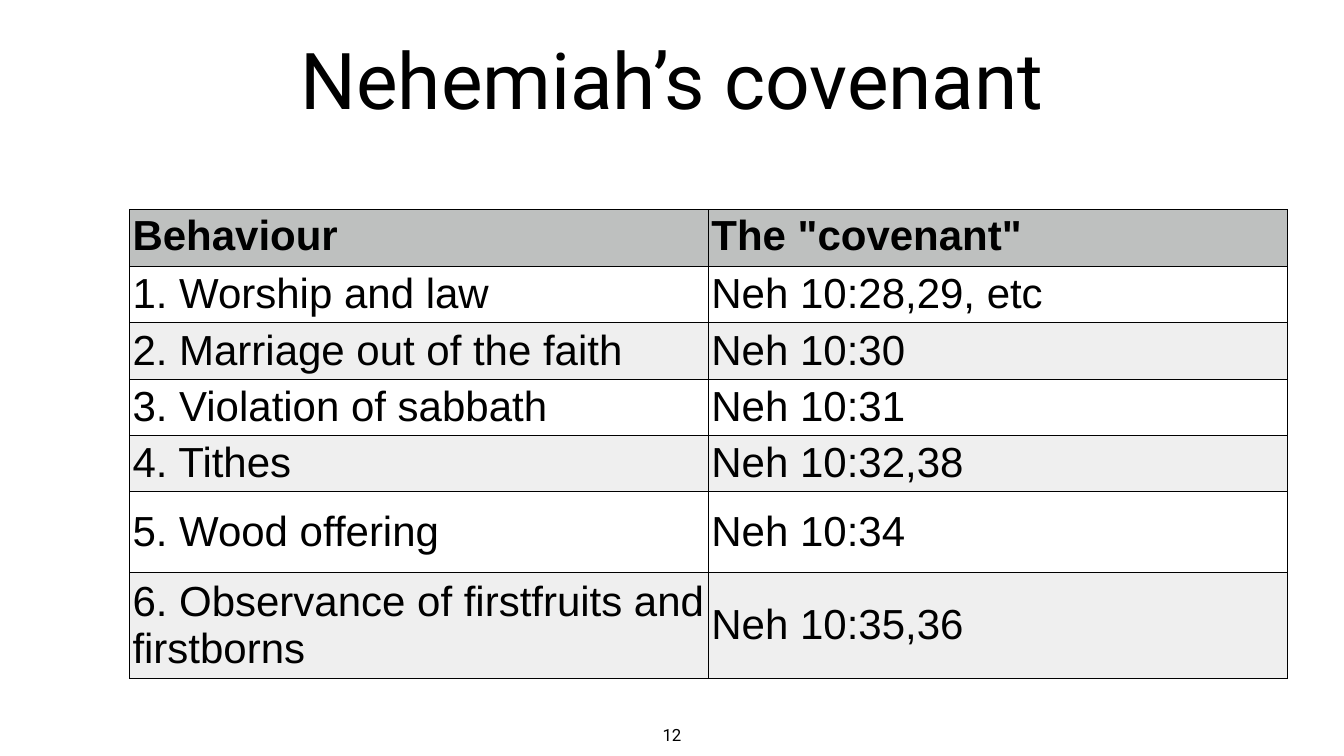
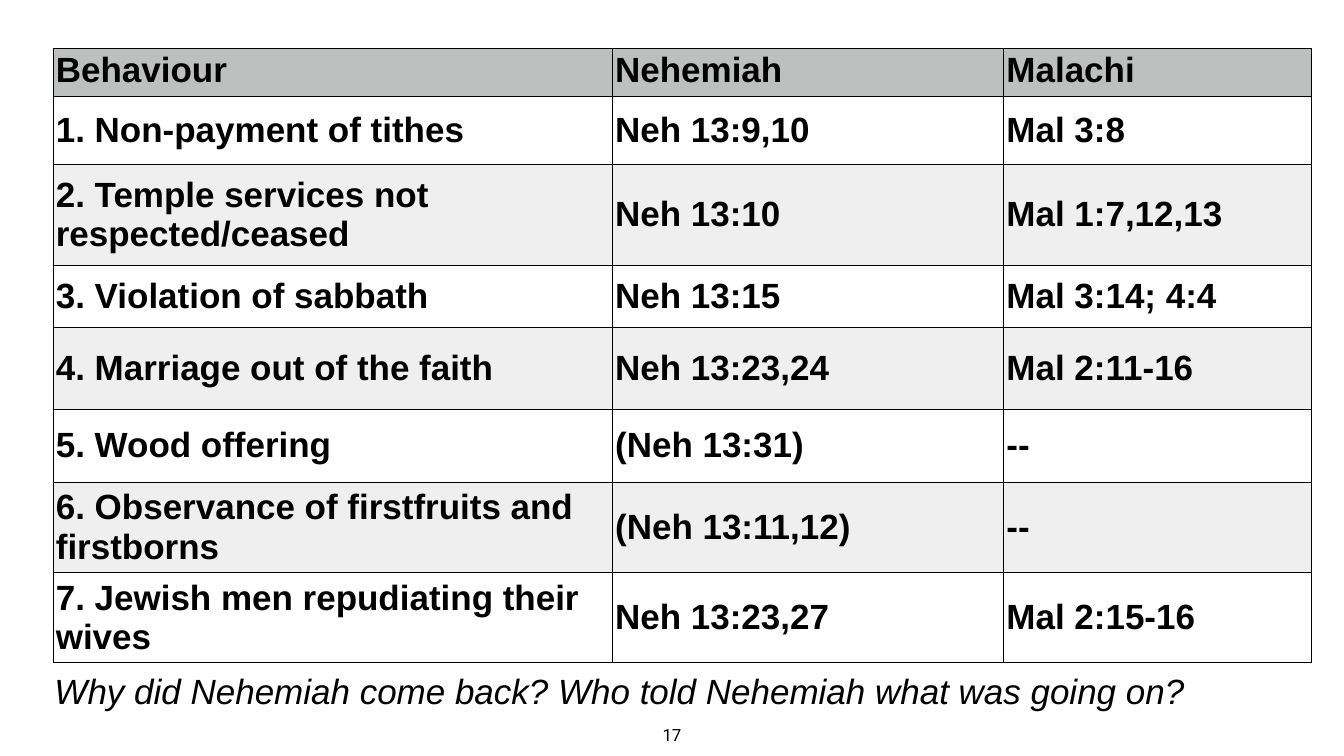
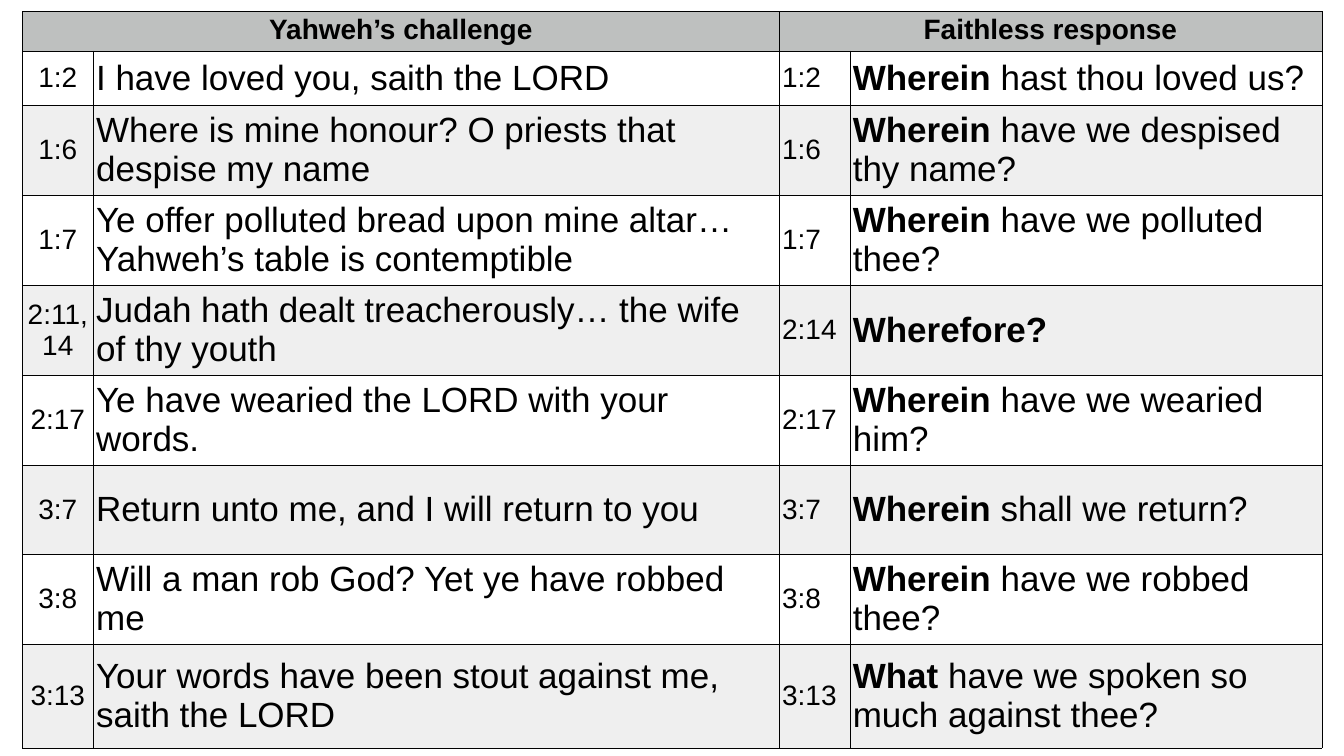
from pptx import Presentation
from pptx.dml.color import RGBColor as RGB
from pptx.enum.text import MSO_ANCHOR as ANCHOR, MSO_AUTO_SIZE as AUTO, PP_ALIGN as ALIGN
from pptx.oxml import parse_xml
from pptx.oxml.ns import nsdecls
from pptx.util import Pt

COLORS = {"text": "000000", "border": "000000", "header": "BEC0BF", "band": "EFEFEF"}
TABLE_FONT, PAGE_FONT = "Arial", "Roboto"
INSET = 4.32
THIN, THICK = 0.25, 0.5
TITLE_LAYOUT, BLANK_LAYOUT = 5, 6

COVENANT = [
    ("Behaviour", 'The "covenant"'),
    ("1. Worship and law", "Neh 10:28,29, etc"),
    ("2. Marriage out of the faith", "Neh 10:30"),
    ("3. Violation of sabbath", "Neh 10:31"),
    ("4. Tithes", "Neh 10:32,38"),
    ("5. Wood offering", "Neh 10:34"),
    ("6. Observance of firstfruits and firstborns", "Neh 10:35,36"),
]
BEHAVIOUR = [
    ("Behaviour", "Nehemiah", "Malachi"),
    ("1. Non-payment of tithes", "Neh 13:9,10", "Mal 3:8"),
    ("2. Temple services not respected/ceased", "Neh 13:10", "Mal 1:7,12,13"),
    ("3. Violation of sabbath", "Neh 13:15", "Mal 3:14; 4:4"),
    ("4. Marriage out of the faith", "Neh 13:23,24", "Mal 2:11-16"),
    ("5. Wood offering", "(Neh 13:31)", "--"),
    ("6. Observance of firstfruits and firstborns", "(Neh 13:11,12)", "--"),
    ("7. Jewish men repudiating their wives", "Neh 13:23,27", "Mal 2:15-16"),
]
QUESTION = "Why did Nehemiah come back? Who told Nehemiah what was going on?"
CHALLENGES = [
    ("Yahweh’s challenge", None, "Faithless response", None),
    ("1:2", "I have loved you, saith the LORD", "1:2", ("Wherein", " hast thou loved us?")),
    ("1:6", "Where is mine honour? O priests that despise my name",
     "1:6", ("Wherein", " have we despised thy name?")),
    ("1:7", "Ye offer polluted bread upon mine altar… Yahweh’s table is contemptible",
     "1:7", ("Wherein", " have we polluted thee?")),
    ("2:11,14", "Judah hath dealt treacherously… the wife of thy youth",
     "2:14", ("Wherefore?",)),
    ("2:17", "Ye have wearied the LORD with your words.",
     "2:17", ("Wherein", " have we wearied him?")),
    ("3:7", "Return unto me, and I will return to you", "3:7", ("Wherein", " shall we return?")),
    ("3:8", "Will a man rob God? Yet ye have robbed me",
     "3:8", ("Wherein", " have we robbed thee?")),
    ("3:13", "Your words have been stout against me, saith the LORD",
     "3:13", ("What", " have we spoken so much against thee?")),
]


def add_run(p, text, size, font=TABLE_FONT, bold=False, italic=False):
    r = p.add_run()
    r.text = text
    r.font.size, r.font.name = Pt(size), font
    r.font.bold, r.font.italic = bold, italic
    r.font.color.rgb = RGB.from_string(COLORS["text"])


def set_insets(box):
    box.margin_left = box.margin_right = box.margin_top = box.margin_bottom = Pt(INSET)


def add_line(s, box, text, size, align=ALIGN.LEFT, anchor=ANCHOR.TOP, **style):
    tf = s.shapes.add_textbox(*map(Pt, box)).text_frame
    set_insets(tf)
    tf.word_wrap, tf.auto_size, tf.vertical_anchor = False, AUTO.SHAPE_TO_FIT_TEXT, anchor
    p = tf.paragraphs[0]
    p.alignment = align
    add_run(p, text, size, **style)


def add_slide(prs, number, layout=BLANK_LAYOUT):
    s = prs.slides.add_slide(prs.slide_layouts[layout])
    add_line(s, (942, 1030.5, 36, 37), str(number), 24, ALIGN.CENTER, font=PAGE_FONT)
    return s


def set_borders(cell, row):
    top = THICK if row == 1 else THIN
    bottom = THICK if row == 0 else THIN
    for side, width in (("L", THIN), ("R", THIN), ("T", top), ("B", bottom)):
        cell._tc.get_or_add_tcPr().append(parse_xml(
            f'<a:ln{side} {nsdecls("a")} w="{Pt(width)}"><a:solidFill>'
            f'<a:srgbClr val="{COLORS["border"]}"/></a:solidFill></a:ln{side}>'))


def fill_cell(cell, row):
    if row == 0 or row % 2 == 0:
        cell.fill.solid()
        cell.fill.fore_color.rgb = RGB.from_string(COLORS["band" if row else "header"])
    else:
        cell.fill.background()


def add_grid(s, left, top, widths, heights, rows, sizes, header_size,
             bold=False, centered=(), header_align=ALIGN.LEFT):
    table = s.shapes.add_table(len(rows), len(widths), Pt(left), Pt(top),
                               Pt(sum(widths)), Pt(sum(heights))).table
    table.first_row = table.horz_banding = False
    for col, width in zip(table.columns, widths):
        col.width = Pt(width)
    for line, height in zip(table.rows, heights):
        line.height = Pt(height)
    for i, values in enumerate(rows):
        for j, value in enumerate(values):
            cell = table.cell(i, j)
            set_insets(cell)
            set_borders(cell, i)
            fill_cell(cell, i)
            if value is None:
                table.cell(i, j - 1).merge(cell)
                continue
            cell.vertical_anchor = ANCHOR.MIDDLE if i else ANCHOR.TOP
            p = cell.text_frame.paragraphs[0]
            p.alignment = header_align if i == 0 else ALIGN.CENTER if j in centered else ALIGN.LEFT
            size = sizes[j] if i else header_size
            if isinstance(value, tuple):
                for k, text in enumerate(value):
                    add_run(p, text, size, bold=k == 0)
            else:
                add_run(p, value, size, bold=bold or i == 0)


def covenant_slide(prs):
    s = add_slide(prs, 12, TITLE_LAYOUT)
    title = s.shapes.title
    title.left, title.top, title.width, title.height = map(Pt, (133, 22, 1654, 180))
    tf = title.text_frame
    set_insets(tf)
    tf.vertical_anchor = ANCHOR.MIDDLE
    p = tf.paragraphs[0]
    p.alignment = ALIGN.CENTER
    add_run(p, "Nehemiah’s covenant", 112, PAGE_FONT)
    add_grid(s, 185, 299, [827] * 2, [78.5] * 5 + [114.5, 78.5], COVENANT, [60] * 2, 60)


def behaviour_slide(prs):
    s = add_slide(prs, 17)
    add_grid(s, 75.5, 69, [799, 559, 439], [68, 97, 144, 89, 117, 104.5, 127, 127],
             BEHAVIOUR, [50] * 3, 50, bold=True)
    add_line(s, (73.5, 953, 1647, 67), QUESTION, 50, anchor=ANCHOR.MIDDLE, italic=True)


def challenge_slide(prs):
    s = add_slide(prs, 22)
    add_grid(s, 32, 16, [101, 980, 101, 674], [57, 77, 128, 128, 127, 128, 127, 128, 148],
             CHALLENGES, [40, 50] * 2, 40, centered=(0,), header_align=ALIGN.CENTER)


def main():
    prs = Presentation()
    prs.slide_width, prs.slide_height = Pt(1920), Pt(1080)
    covenant_slide(prs)
    behaviour_slide(prs)
    challenge_slide(prs)
    prs.save("out.pptx")


if __name__ == "__main__":
    main()
